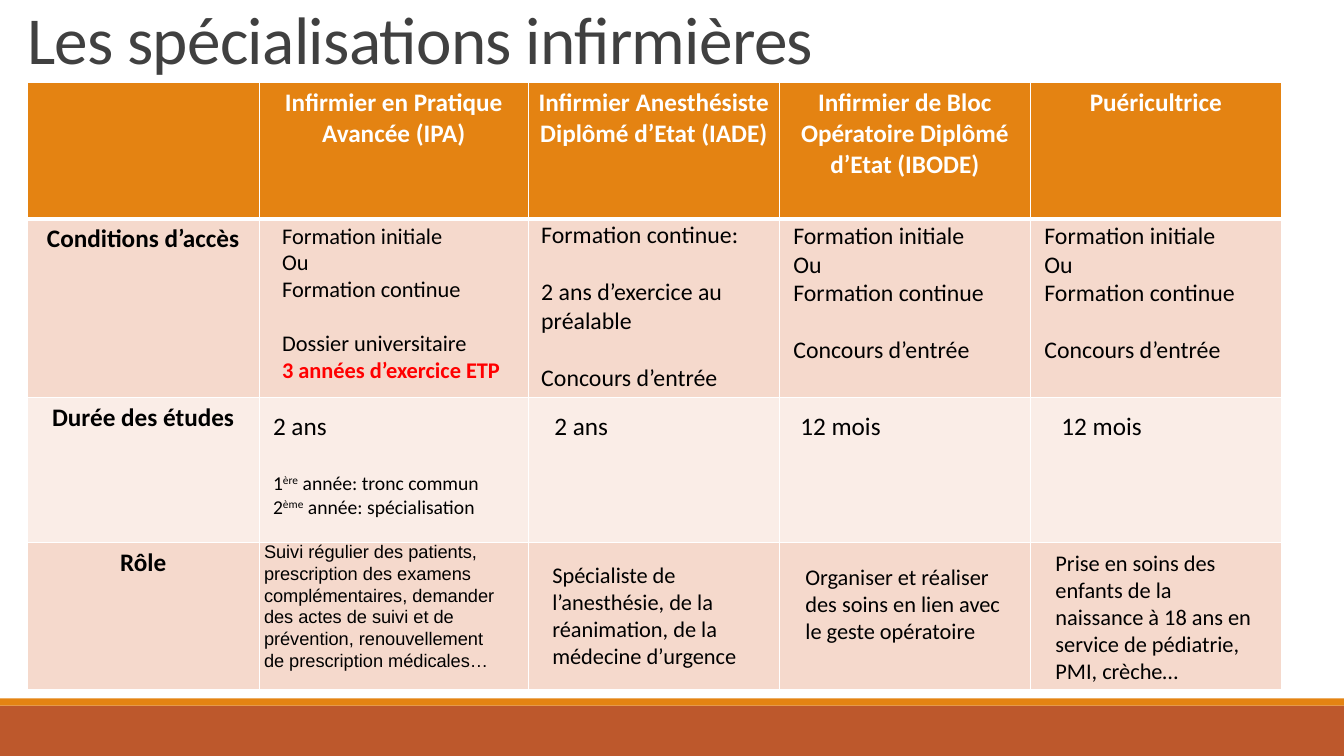
from dataclasses import dataclass, field

from lxml import etree
from pptx import Presentation
from pptx.dml.color import RGBColor
from pptx.enum.shapes import MSO_SHAPE
from pptx.enum.text import MSO_ANCHOR, PP_ALIGN
from pptx.oxml.ns import qn
from pptx.util import Emu, Pt

RECTANGLE = MSO_SHAPE.RECTANGLE
BOTTOM = MSO_ANCHOR.BOTTOM
TOP = MSO_ANCHOR.TOP
CENTER = PP_ALIGN.CENTER
LEFT = PP_ALIGN.LEFT

EMU_PER_PX = 9144
SLIDE_WIDTH, SLIDE_HEIGHT = 1333, 750
WHITE, BLACK, GREY, RED = "FFFFFF", "000000", "404040", "FF0000"
ORANGE, RUST, PINK, PALE_PINK = "E48312", "BD582C", "F5D9CC", "FAEDE7"

TABLE_LEFT, TABLE_TOP = 27, 82
COLUMN_WIDTHS = [230, 267, 249, 249, 249]
ROW_HEIGHTS = [135, 177, 144, 146]
ROW_FILLS = [ORANGE, PINK, PALE_PINK, PINK]
SPECIALTIES = [
    "Infirmier en Pratique Avancée (IPA)",
    "Infirmier Anesthésiste Diplômé d’Etat (IADE)",
    "Infirmier de Bloc Opératoire Diplômé d’Etat (IBODE)",
    "Puéricultrice",
]
CRITERIA = ["Conditions d’accès", "Durée des études", "Rôle"]


@dataclass
class Span:
    text: str
    color: str = BLACK
    bold: bool = False
    baseline: int = 0
    spacing: int = 0


@dataclass
class Line:
    spans: list[Span]
    size: int
    gap: float = 0
    align: PP_ALIGN = LEFT
    line_spacing: float = 1.0


@dataclass
class Note:
    left: int
    top: int
    width: int
    height: int
    lines: list[Line] = field(default_factory=list)
    font: str = "Calibri"
    anchor: MSO_ANCHOR = TOP


@dataclass
class Band:
    top: int
    height: int
    color: str


def px(value: int) -> Emu:
    return Emu(value * EMU_PER_PX)


def rgb(color: str) -> RGBColor:
    return RGBColor.from_string(color)


def plain(text: str, size: int, gap: float = 0) -> Line:
    return Line([Span(text)], size, gap)


def year(number: str, suffix: str, subject: str, gap: float = 0) -> Line:
    spans = [Span(number), Span(suffix, baseline=30000), Span(f" année: {subject}")]
    return Line(spans, 14, gap)


def access_lines(size: int, gap: float, last: str) -> list[Line]:
    return [
        plain("Formation initiale", size),
        plain("Ou", size),
        plain("Formation continue", size),
        plain(last, size, gap),
    ]


def write_lines(text_frame, lines: list[Line], font: str = "Calibri") -> None:
    for index, line in enumerate(lines):
        paragraph = text_frame.paragraphs[0] if index == 0 else text_frame.add_paragraph()
        paragraph_format = {
            "alignment": line.align,
            "space_before": Pt(line.gap),
            "line_spacing": line.line_spacing,
        }
        for name, value in paragraph_format.items():
            setattr(paragraph, name, value)
        for span in line.spans:
            run = paragraph.add_run()
            run.text = span.text
            run.font.color.rgb = rgb(span.color)
            for name, value in {"name": font, "size": Pt(line.size), "bold": span.bold}.items():
                setattr(run.font, name, value)
            for name, value in {"baseline": span.baseline, "spc": span.spacing}.items():
                if value:
                    run._r.get_or_add_rPr().set(name, str(value))


def add_note(slide, note: Note) -> None:
    box = slide.shapes.add_textbox(px(note.left), px(note.top), px(note.width), px(note.height))
    for name, value in {"word_wrap": True, "vertical_anchor": note.anchor}.items():
        setattr(box.text_frame, name, value)
    write_lines(box.text_frame, note.lines, note.font)


def add_band(slide, band: Band) -> None:
    shape = slide.shapes.add_shape(RECTANGLE, 0, px(band.top), px(SLIDE_WIDTH), px(band.height))
    shape.shadow.inherit = False
    shape.fill.solid()
    shape.fill.fore_color.rgb = rgb(band.color)
    shape.line.fill.background()


def set_borders(cell, widths: dict[str, int]) -> None:
    properties = cell._tc.get_or_add_tcPr()
    for index, (side, width) in enumerate(widths.items()):
        border = etree.Element(qn(f"a:{side}"), w=str(Pt(width)))
        fill = etree.SubElement(border, qn("a:solidFill"))
        etree.SubElement(fill, qn("a:srgbClr"), val=WHITE)
        properties.insert(index, border)


def add_specialty_table(slide) -> None:
    table = slide.shapes.add_table(
        len(ROW_HEIGHTS), len(COLUMN_WIDTHS), px(TABLE_LEFT), px(TABLE_TOP),
        px(sum(COLUMN_WIDTHS)), px(sum(ROW_HEIGHTS)),
    ).table
    for column, width in zip(table.columns, COLUMN_WIDTHS):
        column.width = px(width)
    for row, height in zip(table.rows, ROW_HEIGHTS):
        row.height = px(height)
    labels = {(0, index): text for index, text in enumerate(SPECIALTIES, 1)}
    labels.update({(index, 0): text for index, text in enumerate(CRITERIA, 1)})
    for row_index, fill in enumerate(ROW_FILLS):
        for column_index in range(len(COLUMN_WIDTHS)):
            cell = table.cell(row_index, column_index)
            cell.fill.solid()
            cell.fill.fore_color.rgb = rgb(fill)
            top = 3 if row_index == 1 else 1
            bottom = 3 if row_index == 0 else 1
            set_borders(cell, {"lnL": 1, "lnR": 1, "lnT": top, "lnB": bottom})
            if (row_index, column_index) in labels:
                color = WHITE if row_index == 0 else BLACK
                label = Span(labels[row_index, column_index], color, bold=True)
                write_lines(cell.text_frame, [Line([label], 18, align=CENTER)])


BANDS = [Band(700, 50, RUST), Band(693, 7, ORANGE)]
TITLE = Note(17, 0, 933, 83, [
    Line([Span("Les spécialisations infirmières", GREY, spacing=-50)], 48, line_spacing=0.85),
], anchor=BOTTOM)
NOTES = [
    Note(270, 215, 237, 202, access_lines(16, 19.5, "Dossier universitaire") + [
        Line([Span("3 années d’exercice ETP", RED, bold=True)], 16),
    ]),
    Note(527, 213, 237, 182, [
        plain("Formation continue:", 17),
        plain("2 ans d’exercice au préalable", 17, 20.5),
        plain("Concours d’entrée", 17, 20.5),
    ]),
    *[Note(left, 214, 237, 153, access_lines(17, 20.5, "Concours d’entrée")) for left in (777, 1026)],
    Note(261, 402, 263, 118, [
        plain("2 ans", 18),
        year("1", "ère", "tronc commun", 22),
        year("2", "ème", "spécialisation"),
    ]),
    *[Note(left, 402, 217, 40, [plain(duration, 18)])
      for left, duration in ((540, "2 ans"), (784, "12 mois"), (1043, "12 mois"))],
    Note(252, 531, 248, 163, [plain(
        "Suivi régulier des patients, prescription des examens complémentaires, demander "
        "des actes de suivi et de prévention, renouvellement de prescription médicales…", 13,
    )], font="Arial"),
    Note(538, 552, 226, 118, [plain(
        "Spécialiste de l’anesthésie, de la réanimation, de la médecine d’urgence", 16)]),
    Note(789, 554, 226, 91, [plain(
        "Organiser et réaliser des soins en lien avec le geste opératoire", 16)]),
    Note(1037, 540, 226, 145, [plain(
        "Prise en soins des enfants de la naissance à 18 ans en service de pédiatrie, "
        "PMI, crèche…", 16)]),
]


def main() -> None:
    presentation = Presentation()
    presentation.slide_width = px(SLIDE_WIDTH)
    presentation.slide_height = px(SLIDE_HEIGHT)
    slide = presentation.slides.add_slide(presentation.slide_layouts[6])
    for band in BANDS:
        add_band(slide, band)
    add_note(slide, TITLE)
    add_specialty_table(slide)
    for note in NOTES:
        add_note(slide, note)
    presentation.save("out.pptx")


if __name__ == "__main__":
    main()
